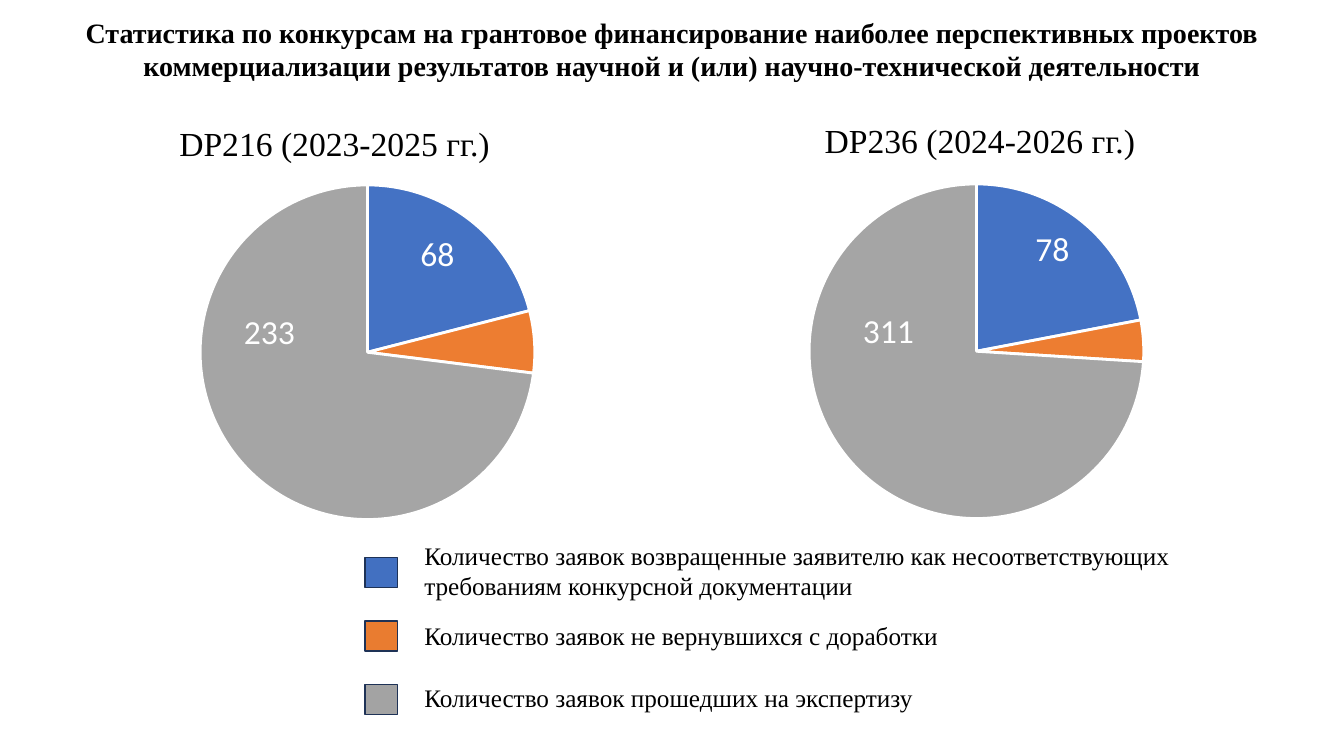
from lxml import etree
from pptx import Presentation
from pptx.chart.data import CategoryChartData
from pptx.dml.color import RGBColor
from pptx.enum.chart import XL_CHART_TYPE
from pptx.enum.shapes import MSO_SHAPE
from pptx.enum.text import MSO_ANCHOR, PP_ALIGN
from pptx.oxml.ns import qn
from pptx.util import Inches, Pt

BLACK = RGBColor(0x00, 0x00, 0x00)
WHITE = RGBColor(0xFF, 0xFF, 0xFF)
OUTLINE = RGBColor(0x1E, 0x32, 0x56)
SLICE_COLOURS = [
    RGBColor(0x44, 0x72, 0xC4),
    RGBColor(0xED, 0x7D, 0x31),
    RGBColor(0xA5, 0xA5, 0xA5),
]
KEY_COLOURS = [
    RGBColor(0x42, 0x70, 0xC1),
    RGBColor(0xE9, 0x7C, 0x30),
    RGBColor(0xA3, 0xA3, 0xA3),
]
SERIF = "Times New Roman"
SANS = "Calibri"

TITLE = (
    "Статистика по конкурсам на грантовое финансирование наиболее перспективных "
    "проектов коммерциализации результатов научной и (или) научно-технической деятельности"
)
CONTESTS = [
    {
        "heading": ("DP216 (2023-2025 гг.)", 1.68, 1.17, 3.57),
        "chart": (0.89, 1.69, 5.51, 3.61),
        "shares": (21, 6, 73),
        "counts": [("68", 4.07, 2.26, 0.7), ("233", 2.32, 3.04, 0.84)],
    },
    {
        "heading": ("DP236 (2024-2026 гг.)", 8.08, 1.14, 3.46),
        "chart": (6.93, 1.67, 5.51, 3.63),
        "shares": (22, 4, 74),
        "counts": [("78", 10.17, 2.21, 0.7), ("311", 8.46, 3.03, 0.87)],
    },
]
LEGEND = [
    ("Количество заявок возвращенные заявителю как несоответствующих "
     "требованиям конкурсной документации", 5.31, 0.71),
    ("Количество заявок не вернувшихся с доработки", 6.11, 0.4),
    ("Количество заявок прошедших на экспертизу", 6.72, 0.4),
]
KEY_TOP, KEY_STEP = 5.53, 0.63
PIE_DIAMETER = 3.32


def format_text(box, words, size, font, colour):
    box.text_frame.word_wrap = True
    box.text_frame.text = words
    span = box.text_frame.paragraphs[0].runs[0]
    span.font.size = Pt(size)
    span.font.name = font
    span.font.color.rgb = colour
    return span


def add_label(page, words, left, top, width, height, size, font, colour):
    box = page.shapes.add_textbox(*map(Inches, (left, top, width, height)))
    format_text(box, words, size, font, colour)


def fix_pie_size(chart, width, height):
    plot_area = chart.plots[0]._element.getparent()
    layout = plot_area.find(qn("c:layout"))
    if layout is None:
        layout = etree.Element(qn("c:layout"))
        plot_area.insert(0, layout)
    manual = etree.SubElement(layout, qn("c:manualLayout"))
    across, down = PIE_DIAMETER / width, PIE_DIAMETER / height
    settings = [
        ("layoutTarget", "inner"), ("xMode", "edge"), ("yMode", "edge"),
        ("x", (1 - across) / 2), ("y", (1 - down) / 2),
        ("w", across), ("h", down),
    ]
    for name, value in settings:
        etree.SubElement(manual, qn(f"c:{name}")).set("val", str(value))


def add_pie(page, place, shares):
    data = CategoryChartData()
    data.categories = ["1", "2", "3"]
    data.add_series("Series 1", shares)
    chart = page.shapes.add_chart(XL_CHART_TYPE.PIE, *map(Inches, place), data).chart
    chart.has_legend = False
    chart.has_title = False
    chart.font.name = SANS
    chart.font.size = Pt(10)
    chart.font.color.rgb = BLACK
    chart.plots[0].vary_by_categories = True
    for index, colour in enumerate(SLICE_COLOURS):
        piece = chart.plots[0].series[0].points[index].format
        piece.fill.solid()
        piece.fill.fore_color.rgb = colour
        piece.line.color.rgb = WHITE
        piece.line.width = Pt(2)
    fix_pie_size(chart, place[2], place[3])


def add_key(page, top, colour):
    key = page.shapes.add_shape(
        MSO_SHAPE.RECTANGLE, Inches(3.62), Inches(top), Inches(0.32), Inches(0.3))
    key.shadow.inherit = False
    key.fill.solid()
    key.fill.fore_color.rgb = colour
    key.line.color.rgb = OUTLINE
    key.line.width = Pt(1)


def main():
    deck = Presentation()
    deck.slide_width, deck.slide_height = Inches(13.33), Inches(7.5)
    page = deck.slides.add_slide(deck.slide_layouts[5])

    title = page.shapes.title
    title.left, title.top = Inches(0), Inches(0.1)
    title.width, title.height = Inches(13.33), Inches(0.77)
    format_text(title, TITLE, 20, SERIF, BLACK).font.bold = True
    title.text_frame.vertical_anchor = MSO_ANCHOR.TOP
    title.text_frame.paragraphs[0].alignment = PP_ALIGN.CENTER

    for contest in CONTESTS:
        add_pie(page, contest["chart"], contest["shares"])
        add_label(page, *contest["heading"], 0.5, 24, SERIF, BLACK)
        for count in contest["counts"]:
            add_label(page, *count, 0.5, 24, SANS, WHITE)

    for index, (words, top, height) in enumerate(LEGEND):
        add_key(page, KEY_TOP + index * KEY_STEP, KEY_COLOURS[index])
        add_label(page, words, 4.11, top, 7.97, height, 18, SERIF, BLACK)

    deck.save("out.pptx")


if __name__ == "__main__":
    main()
